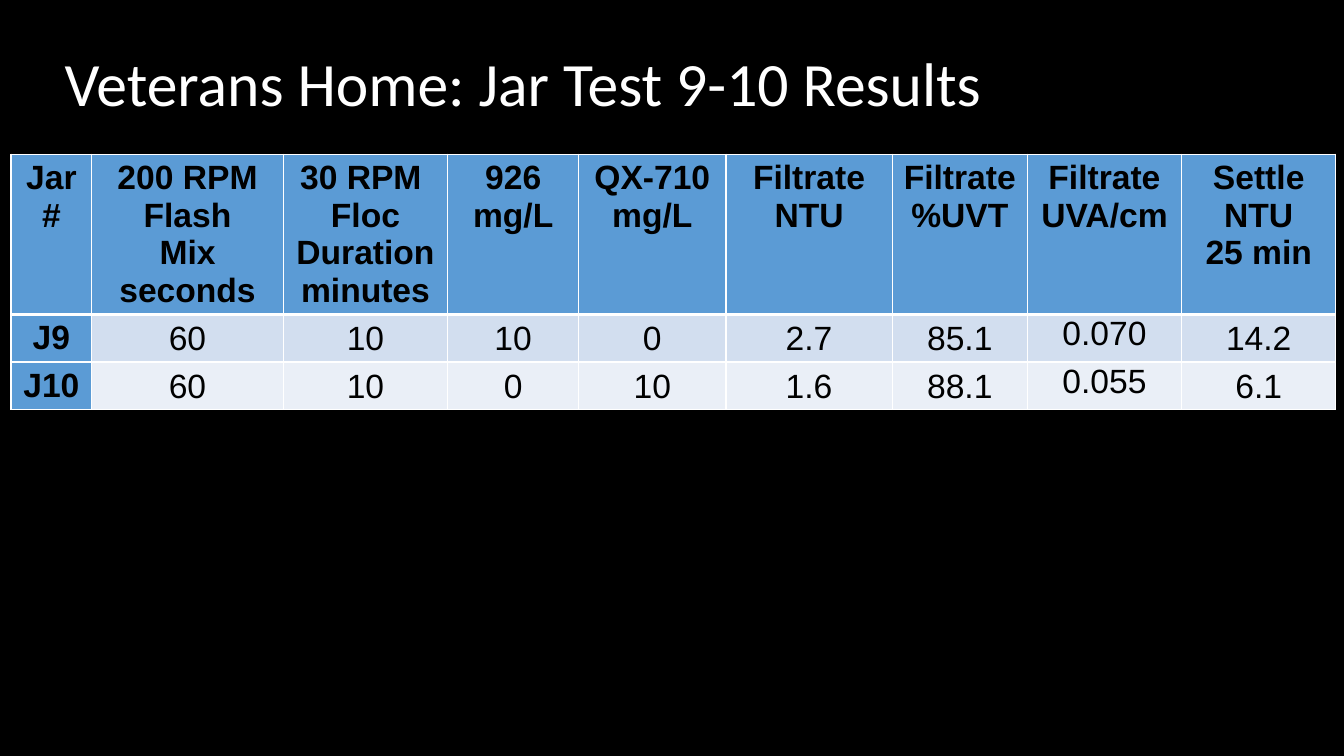
from pptx import Presentation
from pptx.dml.color import RGBColor
from pptx.enum.text import MSO_ANCHOR, PP_ALIGN
from pptx.oxml import parse_xml
from pptx.oxml.ns import nsdecls
from pptx.util import Inches, Pt

BLACK = RGBColor(0x00, 0x00, 0x00)
WHITE = RGBColor(0xFF, 0xFF, 0xFF)
BLUE = RGBColor(0x5B, 0x9B, 0xD5)
BANDS = [RGBColor(0xD2, 0xDE, 0xEF), RGBColor(0xEA, 0xEF, 0xF7)]

COLUMNS = [0.8, 1.9, 1.63, 1.3, 1.46, 1.65, 1.34, 1.53, 1.53]
ROWS = [1.59, 0.47, 0.47]
UVA_COLUMN = 7
DATA = [
    ["Jar\n#", "200 RPM\nFlash\nMix\nseconds", "30 RPM \nFloc\nDuration\nminutes",
     "926\nmg/L", "QX-710\nmg/L", "Filtrate\nNTU", "Filtrate\n%UVT",
     "Filtrate\nUVA/cm", "Settle\nNTU\n25 min"],
    ["J9", "60", "10", "10", "0", "2.7", "85.1", "0.070", "14.2"],
    ["J10", "60", "10", "0", "10", "1.6", "88.1", "0.055", "6.1"],
]


def add_run(p, text, font, size, color, bold=False):
    r = p.add_run()
    r.text = text
    r.font.name = font
    r.font.size = Pt(size)
    r.font.bold = bold
    r.font.color.rgb = color


def set_borders(cell, widths):
    tcPr = cell._tc.get_or_add_tcPr()
    for i, (side, width) in enumerate(widths.items()):
        tcPr.insert(i, parse_xml(
            f'<a:ln{side} {nsdecls("a")} w="{Pt(width)}"><a:solidFill>'
            f'<a:srgbClr val="{WHITE}"/></a:solidFill></a:ln{side}>'))


prs = Presentation()
prs.slide_width = Inches(13.33)
prs.slide_height = Inches(7.5)
s = prs.slides.add_slide(prs.slide_layouts[5])
s.background.fill.solid()
s.background.fill.fore_color.rgb = BLACK

title = s.shapes.title
title.left, title.top = Inches(0.54), Inches(0.13)
title.width, title.height = Inches(11.88), Inches(1.45)
tf = title.text_frame
tf.word_wrap = True
tf.vertical_anchor = MSO_ANCHOR.MIDDLE
p = tf.paragraphs[0]
p.alignment = PP_ALIGN.LEFT
p.line_spacing = 0.9
add_run(p, "Veterans Home: Jar Test 9-10 Results", "Calibri", 44, WHITE)

table = s.shapes.add_table(len(ROWS), len(COLUMNS), Inches(0.11), Inches(1.53),
                           Inches(sum(COLUMNS)), Inches(sum(ROWS))).table
for column, width in zip(table.columns, COLUMNS):
    column.width = Inches(width)
for row, height in zip(table.rows, ROWS):
    row.height = Inches(height)

for i, values in enumerate(DATA):
    for j, text in enumerate(values):
        cell = table.cell(i, j)
        heading = i == 0 or j == 0
        cell.fill.solid()
        cell.fill.fore_color.rgb = BLUE if heading else BANDS[i - 1]
        set_borders(cell, {"L": 1, "R": 1, "T": 3 if i == 1 else 1, "B": 3 if i == 0 else 1})
        if not heading:
            cell.margin_left = cell.margin_right = cell.margin_top = Inches(0.01)
            cell.margin_bottom = 0
            if j != UVA_COLUMN:
                cell.vertical_anchor = MSO_ANCHOR.MIDDLE
        tf = cell.text_frame
        for k, line in enumerate(text.split("\n")):
            p = tf.add_paragraph() if k else tf.paragraphs[0]
            p.alignment = PP_ALIGN.CENTER
            add_run(p, line, "Arial", 24, BLACK, heading)

prs.save("out.pptx")
